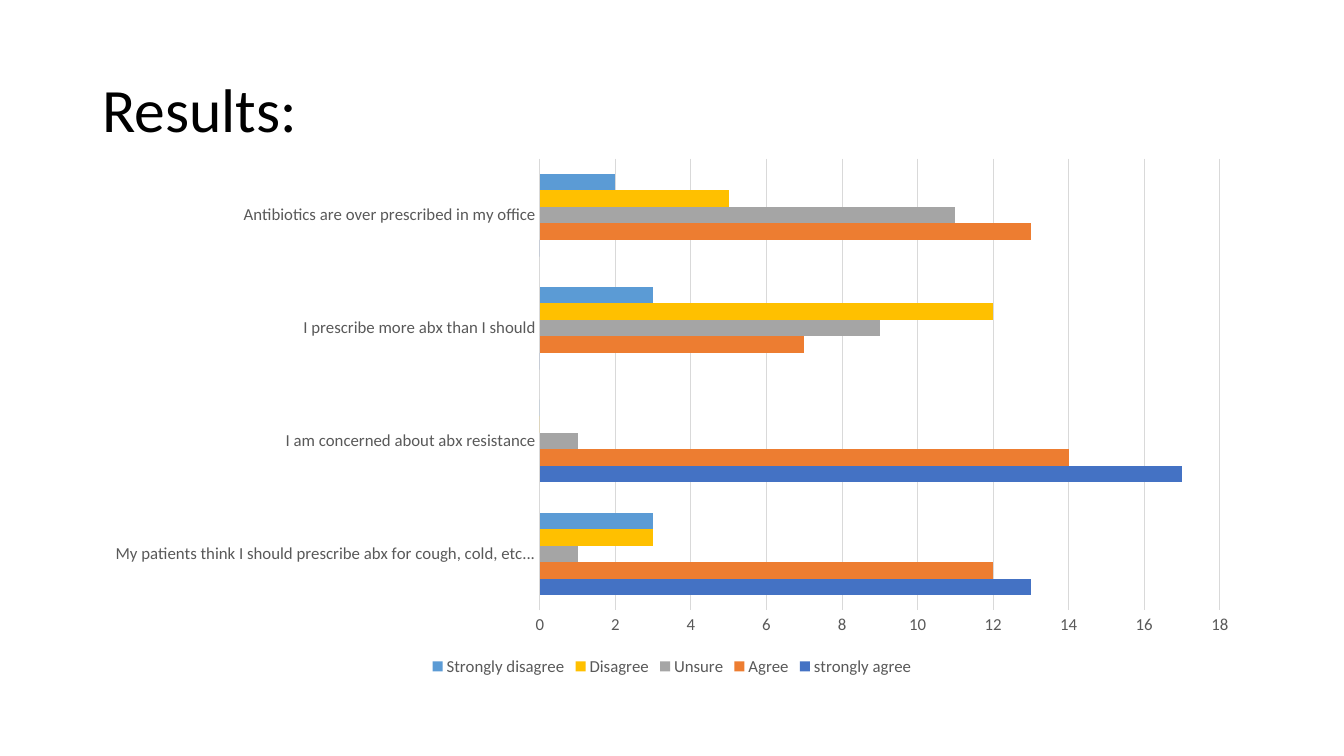
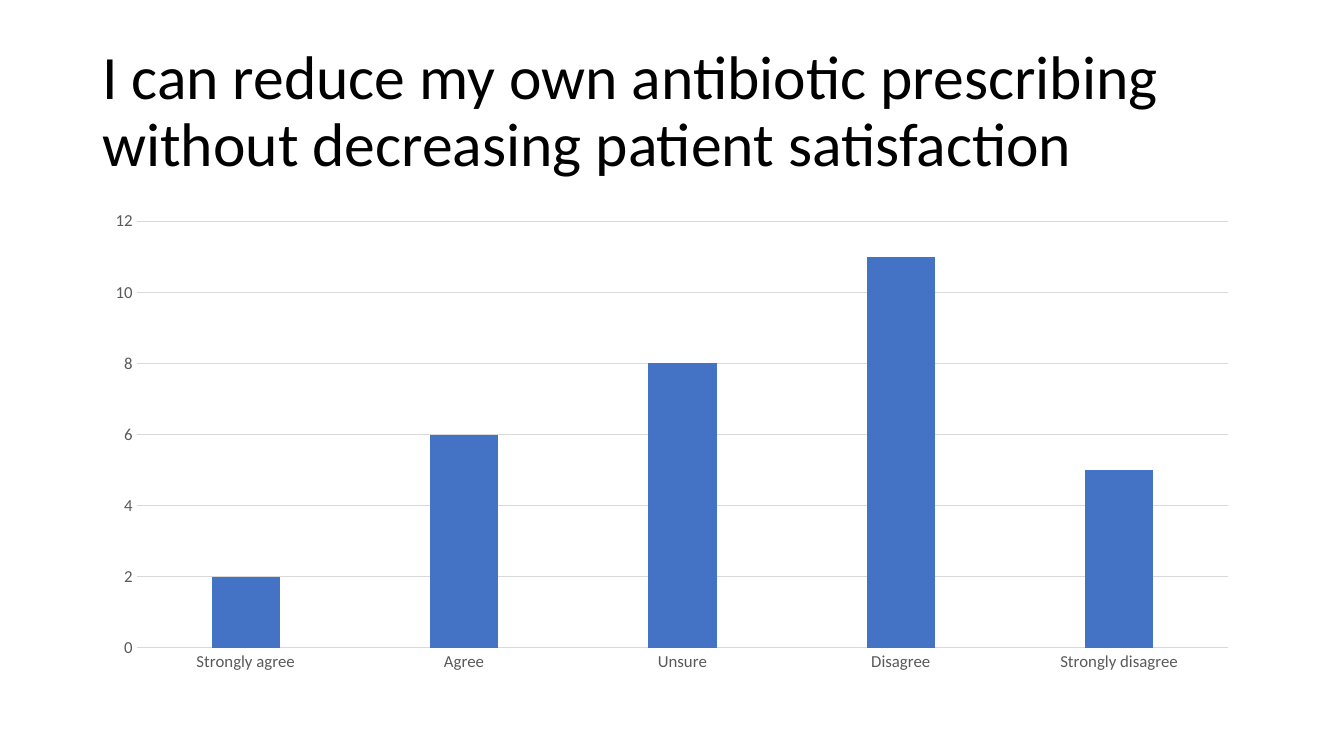
"""Build two survey result slides, each with a title and a native chart."""
from dataclasses import dataclass

from pptx import Presentation
from pptx.chart.data import CategoryChartData
from pptx.dml.color import RGBColor
from pptx.enum.chart import XL_CHART_TYPE, XL_LEGEND_POSITION, XL_TICK_MARK
from pptx.enum.text import MSO_ANCHOR
from pptx.util import Pt

BAR = XL_CHART_TYPE.BAR_CLUSTERED
COLUMN = XL_CHART_TYPE.COLUMN_CLUSTERED
BOTTOM = XL_LEGEND_POSITION.BOTTOM
NO_TICK = XL_TICK_MARK.NONE
MIDDLE = MSO_ANCHOR.MIDDLE

PX = 9525
SIZE = (1280, 720)
LEFT, WIDTH = 88, 1104
TITLE = (LEFT, 38, WIDTH, 139)


@dataclass(frozen=True)
class Theme:
    font: str = "Calibri"
    ink: str = "000000"
    label: str = "595959"
    grid: str = "D9D9D9"
    title_size: float = 44
    label_size: float = 12
    line_size: float = 0.75
    fills: tuple = ("4472C4", "ED7D31", "A5A5A5", "FFC000", "5B9BD5")


THEME = Theme()

SLIDES = [
    {
        "title": "Results:",
        "kind": BAR, "top": 141, "height": 507,
        "gap": 182, "overlap": 0, "legend": True,
        "cats": [
            "My patients think I should prescribe abx for cough, cold, etc...",
            "I am concerned about abx resistance",
            "I prescribe more abx than I should",
            "Antibiotics are over prescribed in my office",
        ],
        "series": [
            ("strongly agree", (13, 17, 0, 0)),
            ("Agree", (12, 14, 7, 13)),
            ("Unsure", (1, 1, 9, 11)),
            ("Disagree", (3, 0, 12, 5)),
            ("Strongly disagree", (3, 0, 3, 2)),
        ],
    },
    {
        "title": "I can reduce my own antibiotic prescribing "
                 "without decreasing patient satisfaction",
        "kind": COLUMN, "top": 192, "height": 457,
        "gap": 219, "overlap": -27, "legend": False,
        "cats": ["Strongly agree", "Agree", "Unsure", "Disagree",
                 "Strongly disagree"],
        "series": [("Series 1", (2, 6, 8, 11, 5))],
    },
]


def emu(box):
    return [side * PX for side in box]


def style_font(font, size, color):
    font.name = THEME.font
    font.size = Pt(size)
    font.color.rgb = RGBColor.from_string(color)


def style_line(line):
    line.color.rgb = RGBColor.from_string(THEME.grid)
    line.width = Pt(THEME.line_size)


def add_title(slide, text):
    frame = slide.shapes.add_textbox(*emu(TITLE)).text_frame
    frame.word_wrap = True
    frame.vertical_anchor = MIDDLE
    para = frame.paragraphs[0]
    para.line_spacing = 0.9
    run = para.add_run()
    run.text = text
    style_font(run.font, THEME.title_size, THEME.ink)


def style_axes(chart):
    cat, val = chart.category_axis, chart.value_axis
    for axis in (cat, val):
        axis.major_tick_mark = axis.minor_tick_mark = NO_TICK
        style_font(axis.tick_labels.font, THEME.label_size, THEME.label)
    style_line(cat.format.line)
    val.format.line.fill.background()
    val.has_major_gridlines = True
    style_line(val.major_gridlines.format.line)


def add_chart(slide, item):
    data = CategoryChartData()
    data.categories = item["cats"]
    for name, vals in item["series"]:
        data.add_series(name, vals)
    box = emu((LEFT, item["top"], WIDTH, item["height"]))
    chart = slide.shapes.add_chart(item["kind"], *box, data).chart
    style_font(chart.font, THEME.label_size, THEME.label)
    chart.has_title = False
    style_axes(chart)
    plot = chart.plots[0]
    plot.vary_by_categories = False
    plot.gap_width = item["gap"]
    plot.overlap = item["overlap"]
    for series, color in zip(plot.series, THEME.fills):
        series.format.fill.solid()
        series.format.fill.fore_color.rgb = RGBColor.from_string(color)
        series.invert_if_negative = False
    chart.has_legend = item["legend"]
    if item["legend"]:
        chart.legend.position = BOTTOM
        chart.legend.include_in_layout = False
        style_font(chart.legend.font, THEME.label_size, THEME.label)


def main():
    deck = Presentation()
    deck.slide_width, deck.slide_height = emu(SIZE)
    blank = deck.slide_layouts[6]
    for item in SLIDES:
        slide = deck.slides.add_slide(blank)
        add_title(slide, item["title"])
        add_chart(slide, item)
    deck.save("out.pptx")


if __name__ == "__main__":
    main()
